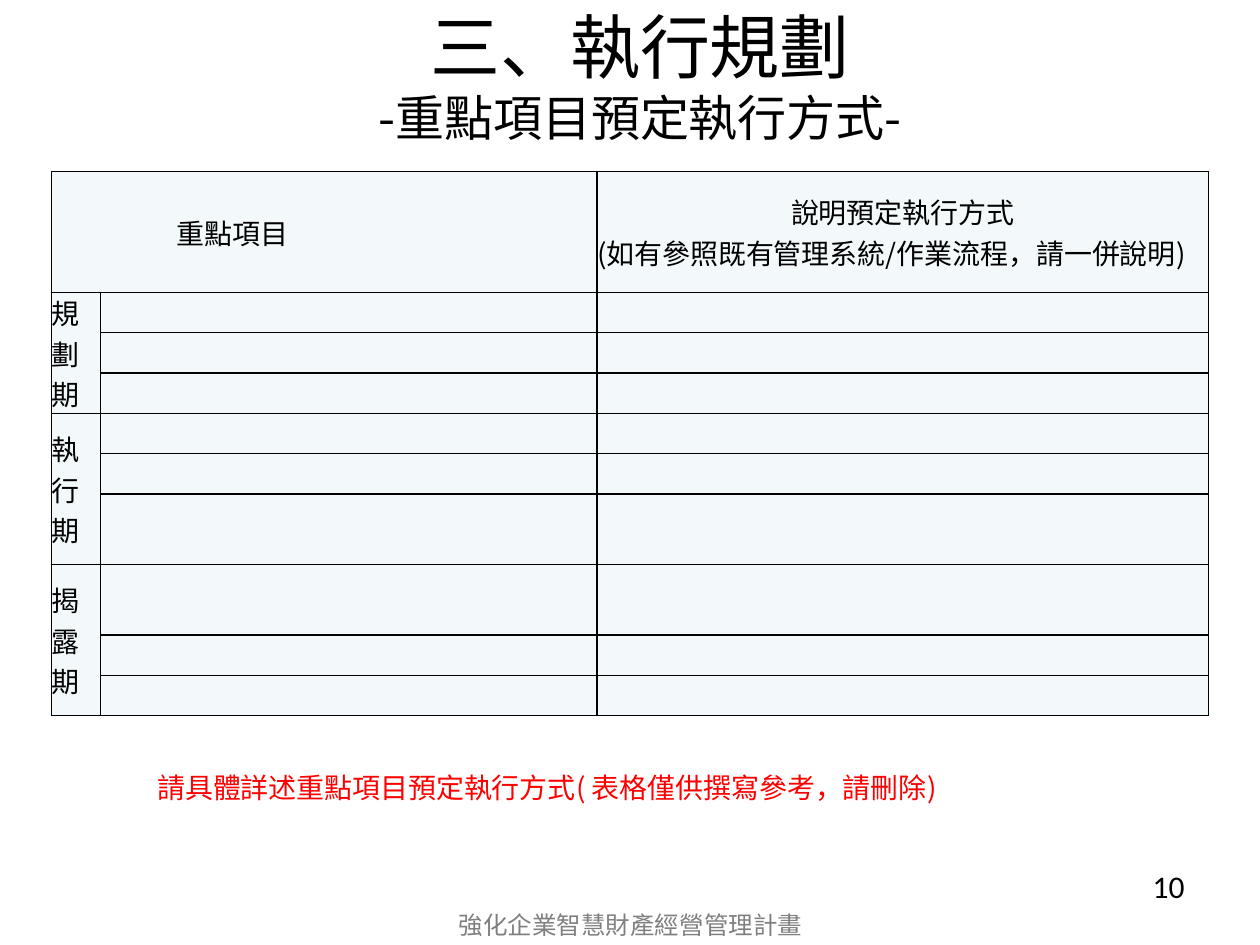
from dataclasses import dataclass

from lxml import etree
from pptx import Presentation
from pptx.dml.color import RGBColor
from pptx.enum.text import MSO_ANCHOR, MSO_AUTO_SIZE, PP_ALIGN
from pptx.oxml.ns import qn
from pptx.util import Inches, Pt

LEFT, CENTER, RIGHT = PP_ALIGN.LEFT, PP_ALIGN.CENTER, PP_ALIGN.RIGHT
MIDDLE = MSO_ANCHOR.MIDDLE
NO_AUTOFIT = MSO_AUTO_SIZE.NONE

BLACK = RGBColor(0x00, 0x00, 0x00)
GRAY = RGBColor(0x7F, 0x7F, 0x7F)
RED = RGBColor(0xFF, 0x00, 0x00)
PALE_BLUE = RGBColor(0xF3, 0xF9, 0xFA)
CJK_FONT = "Noto Sans CJK SC"
NUMBER_FONT = "Calibri"
TABLE_SIZE = 16


@dataclass(frozen=True)
class Box:
    left: float
    top: float
    width: float
    height: float

    def emu(self) -> tuple:
        return tuple(Inches(v) for v in (self.left, self.top, self.width, self.height))


@dataclass(frozen=True)
class Note:
    text: str
    box: Box
    size: int
    color: RGBColor
    align: PP_ALIGN
    font: str = CJK_FONT


@dataclass(frozen=True)
class Phase:
    lines: tuple
    row_heights: tuple


# Content and grid
LINE, TALL = 0.32, 0.56
HEADER_HEIGHT = 3 * LINE
COLUMNS = (0.39, 3.94, 4.85)
TABLE_LEFT, TABLE_TOP = 0.41, 1.36
PHASES = (
    Phase(("規", "劃", "期"), (LINE, LINE, LINE)),
    Phase(("執行", "期"), (LINE, LINE, TALL)),
    Phase(("揭", "露", "期"), (TALL, LINE, LINE)),
)
NOTES = (
    Note("10", Box(7.17, 6.83, 2.33, 0.52), 18, BLACK, RIGHT, NUMBER_FONT),
    Note("強化企業智慧財產經營管理計畫", Box(3.42, 7.17, 3.17, 0.52), 14, GRAY, CENTER),
    Note("請具體詳述重點項目預定執行方式( 表格僅供撰寫參考，請刪除)",
         Box(1.15, 6.07, 7.56, 0.37), 16, RED, LEFT),
)


def add_run(paragraph, text: str, size: int, color: RGBColor = BLACK,
            font: str = CJK_FONT) -> None:
    run = paragraph.add_run()
    run.text = text
    run.font.size = Pt(size)
    run.font.color.rgb = color
    run.font.name = font
    # East Asian typeface follows the Latin one
    properties = run.font._element
    etree.SubElement(properties, qn("a:ea")).set("typeface", font)


def add_note(slide, note: Note) -> None:
    frame = slide.shapes.add_textbox(*note.box.emu()).text_frame
    frame.word_wrap = True
    paragraph = frame.paragraphs[0]
    paragraph.alignment = note.align
    add_run(paragraph, note.text, note.size, note.color, note.font)


def style_cell(cell) -> None:
    cell.margin_left = cell.margin_right = cell.margin_top = cell.margin_bottom = 0
    cell.vertical_anchor = MIDDLE
    properties = cell._tc.get_or_add_tcPr()
    for side in ("a:lnL", "a:lnR", "a:lnT", "a:lnB"):
        border = etree.SubElement(properties, qn(side), w=str(Pt(1)))
        fill = etree.SubElement(border, qn("a:solidFill"))
        etree.SubElement(fill, qn("a:srgbClr"), val=str(BLACK))
    cell.fill.solid()
    cell.fill.fore_color.rgb = PALE_BLUE
    # Empty cells keep the height of a table line
    end = etree.SubElement(cell.text_frame.paragraphs[0]._p, qn("a:endParaRPr"))
    end.set("sz", str(TABLE_SIZE * 100))


def write_cell(cell, lines: tuple, aligns: tuple = ()) -> None:
    frame = cell.text_frame
    for index, line in enumerate(lines):
        paragraph = frame.add_paragraph() if index else frame.paragraphs[0]
        paragraph.alignment = aligns[index] if aligns else LEFT
        add_run(paragraph, line, TABLE_SIZE)


def add_plan_table(slide) -> None:
    heights = [HEADER_HEIGHT] + [h for phase in PHASES for h in phase.row_heights]
    box = Box(TABLE_LEFT, TABLE_TOP, sum(COLUMNS), sum(heights))
    table = slide.shapes.add_table(len(heights), len(COLUMNS), *box.emu()).table
    for column, width in zip(table.columns, COLUMNS):
        column.width = Inches(width)
    for row, height in zip(table.rows, heights):
        row.height = Inches(height)
        for cell in row.cells:
            style_cell(cell)

    # Header row
    item_header = table.cell(0, 0)
    item_header.merge(table.cell(0, 1))
    item_header.margin_left = Inches(0.99)
    write_cell(item_header, ("重點項目",))
    write_cell(table.cell(0, 2),
               ("說明預定執行方式", "(如有參照既有管理系統/作業流程，請一併說明)"),
               (CENTER, LEFT))

    # One merged label per phase
    first_row = 1
    for phase in PHASES:
        label = table.cell(first_row, 0)
        last_row = first_row + len(phase.row_heights) - 1
        label.merge(table.cell(last_row, 0))
        write_cell(label, phase.lines)
        first_row = last_row + 1


def set_title(slide) -> None:
    title = slide.shapes.title
    title.left, title.top, title.width, title.height = Box(0.58, -0.03, 9, 1.25).emu()
    frame = title.text_frame
    frame.auto_size = NO_AUTOFIT
    frame.vertical_anchor = MIDDLE
    paragraph = frame.paragraphs[0]
    paragraph.alignment = CENTER
    add_run(paragraph, "三、執行規劃", 40)
    paragraph.add_line_break()
    add_run(paragraph, "-重點項目預定執行方式-", 28)


def main() -> None:
    presentation = Presentation()
    presentation.slide_width, presentation.slide_height = Inches(10), Inches(7.5)
    title_only = presentation.slide_layouts[5]
    slide = presentation.slides.add_slide(title_only)
    set_title(slide)
    add_plan_table(slide)
    for note in NOTES:
        add_note(slide, note)
    presentation.save("out.pptx")


if __name__ == "__main__":
    main()
